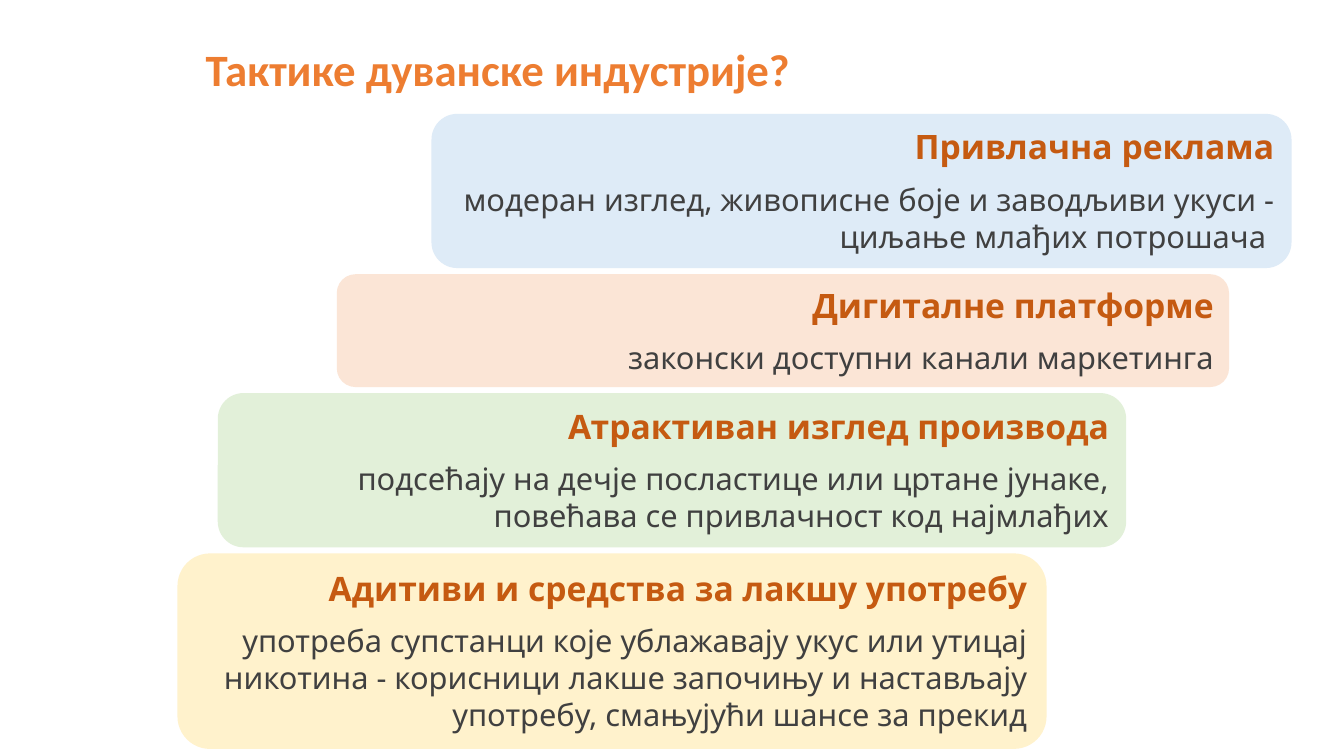
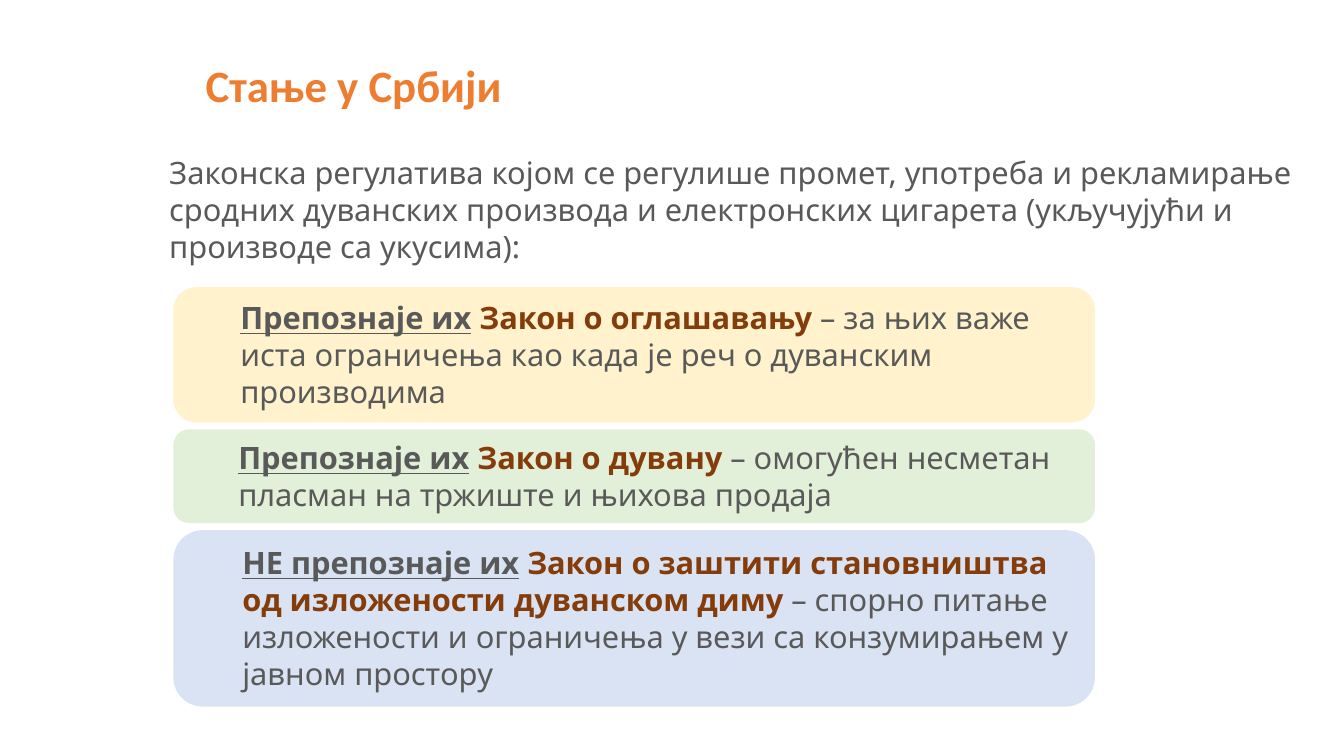
from pptx import Presentation
from pptx.dml.color import RGBColor
from pptx.enum.shapes import MSO_SHAPE
from pptx.enum.text import MSO_ANCHOR, MSO_AUTO_SIZE, PP_ALIGN
from pptx.util import Inches, Pt

# Shared style
ORANGE = RGBColor(0xED, 0x7D, 0x31)
RUST = RGBColor(0xC5, 0x5A, 0x11)
BROWN = RGBColor(0x84, 0x3C, 0x0B)
CHARCOAL = RGBColor(0x40, 0x40, 0x40)
GREY = RGBColor(0x59, 0x59, 0x59)
SKY = RGBColor(0xDE, 0xEB, 0xF7)
PEACH = RGBColor(0xFB, 0xE5, 0xD6)
GREEN = RGBColor(0xE2, 0xF0, 0xD9)
YELLOW = RGBColor(0xFF, 0xF2, 0xCC)
BLUE = RGBColor(0xDA, 0xE3, 0xF3)
TITLE_FONT = "Calibri"
BODY_FONT = "Noto Sans"


def add_text(paragraph, text, size=22, color=GREY, bold=False,
             underline=False, font=BODY_FONT):
    run = paragraph.add_run()
    run.text = text
    run.font.name = font
    run.font.size = Pt(size)
    run.font.bold = bold
    run.font.underline = underline
    run.font.color.rgb = color


def add_panel(slide, left, top, width, height, fill):
    shape = slide.shapes.add_shape(
        MSO_SHAPE.ROUNDED_RECTANGLE,
        Inches(left), Inches(top), Inches(width), Inches(height))
    shape.shadow.inherit = False
    shape.fill.solid()
    shape.fill.fore_color.rgb = fill
    shape.line.fill.background()
    frame = shape.text_frame
    frame.word_wrap = True
    frame.auto_size = MSO_AUTO_SIZE.SHAPE_TO_FIT_TEXT
    frame.vertical_anchor = MSO_ANCHOR.TOP
    return frame


presentation = Presentation()
presentation.slide_width = Inches(13.33)
presentation.slide_height = Inches(7.5)

# Slides with their titles
slides = []
for title_text, title_top in (("Тактике дуванске индустрије?", 0.13),
                              ("Стање у Србији", 0.29)):
    slide = presentation.slides.add_slide(presentation.slide_layouts[5])
    title = slide.shapes.title
    title.left, title.top = Inches(1.94), Inches(title_top)
    title.width, title.height = Inches(10.88), Inches(1.16)
    title.text_frame.auto_size = MSO_AUTO_SIZE.NONE
    title.text_frame.vertical_anchor = MSO_ANCHOR.MIDDLE
    paragraph = title.text_frame.paragraphs[0]
    paragraph.alignment = PP_ALIGN.LEFT
    paragraph.line_spacing = 0.9
    add_text(paragraph, title_text, size=32, color=ORANGE, bold=True,
             font=TITLE_FONT)
    slides.append(slide)
tactics_slide, law_slide = slides

# Slide 1: staircase of tactics, stacked with an equal gap
PANEL_GAP = 0.06
tactics = [
    (4.28, 8.53, 1.53, SKY, "Привлачна реклама",
     "модеран изглед, живописне боје и заводљиви укуси - "
     "циљање млађих потрошача "),
    (3.34, 8.85, 1.12, PEACH, "Дигиталне платформе",
     "законски доступни канали маркетинга"),
    (2.16, 9.01, 1.53, GREEN, "Атрактиван изглед производа",
     "подсећају на дечје посластице или цртане јунаке, "
     "повећава се привлачност код најмлађих"),
    (1.76, 8.62, 1.94, YELLOW, "Адитиви и средства за лакшу употребу",
     "употреба супстанци које ублажавају укус или утицај никотина - "
     "корисници лакше започињу и настављају употребу, "
     "смањујући шансе за прекид"),
]
top = 1.13
for left, width, height, fill, heading, detail in tactics:
    frame = add_panel(tactics_slide, left, top, width, height, fill)
    paragraph = frame.paragraphs[0]
    paragraph.alignment = PP_ALIGN.RIGHT
    add_text(paragraph, heading, size=24, color=RUST, bold=True)
    paragraph = frame.add_paragraph()
    paragraph.alignment = PP_ALIGN.RIGHT
    paragraph.space_before = Pt(10)
    add_text(paragraph, detail, color=CHARCOAL)
    top += height + PANEL_GAP

# Slide 2: introduction
introduction = law_slide.shapes.add_textbox(
    Inches(1.58), Inches(1.48), Inches(11.75), Inches(1.25))
introduction.text_frame.word_wrap = True
add_text(introduction.text_frame.paragraphs[0],
         "Законска регулатива којом се регулише промет, употреба и "
         "рекламирање сродних дуванских производа и електронских цигарета "
         "(укључујући и производе са укусима):")

# Slide 2: laws, stacked with an equal gap
LAW_GAP = 0.07
laws = [
    (1.34, YELLOW, "Препознаје их", "Закон о оглашавању ",
     "– за њих важе иста ограничења као када је реч о дуванским производима"),
    (0.93, GREEN, "Препознаје их", "Закон о дувану ",
     "– омогућен несметан пласман на тржиште и њихова продаја"),
    (1.75, BLUE, "НЕ препознаје их",
     "Закон о заштити становништва од изложености дуванском диму ",
     "– спорно питање изложености и ограничења у вези са конзумирањем "
     "у јавном простору"),
]
top = 2.85
for height, fill, status, law, detail in laws:
    frame = add_panel(law_slide, 1.72, top, 9.14, height, fill)
    paragraph = frame.paragraphs[0]
    paragraph.alignment = PP_ALIGN.LEFT
    properties = paragraph._p.get_or_add_pPr()
    properties.set("marL", str(Inches(0.5)))
    properties.set("indent", "0")
    add_text(paragraph, status, bold=True, underline=True)
    add_text(paragraph, " ", bold=True)
    add_text(paragraph, law, color=BROWN, bold=True)
    add_text(paragraph, detail)
    top += height + LAW_GAP

presentation.save("out.pptx")
